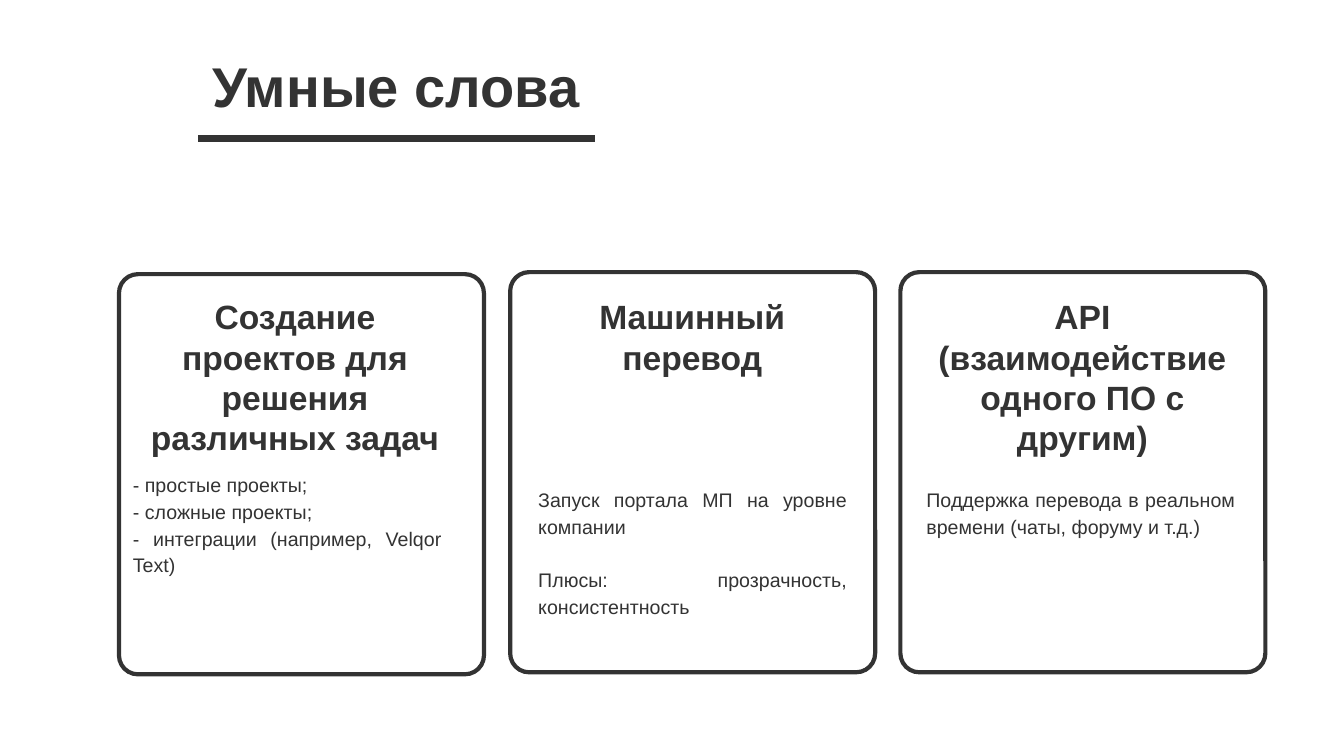
from lxml import etree
from pptx import Presentation
from pptx.dml.color import RGBColor
from pptx.enum.shapes import MSO_CONNECTOR, MSO_SHAPE
from pptx.enum.text import MSO_ANCHOR, MSO_AUTO_SIZE, PP_ALIGN
from pptx.oxml.ns import qn
from pptx.util import Inches, Pt

STRAIGHT = MSO_CONNECTOR.STRAIGHT
ROUNDED = MSO_SHAPE.ROUNDED_RECTANGLE
TOP = MSO_ANCHOR.TOP
FIT_SHAPE = MSO_AUTO_SIZE.SHAPE_TO_FIT_TEXT
CENTER, JUSTIFY = PP_ALIGN.CENTER, PP_ALIGN.JUSTIFY
DARK = "333333"
CARD_WIDTH, CARD_HEIGHT = 3.62, 3.97


def color(hex_value):
    return RGBColor.from_string(hex_value)


def write(holder, paragraphs, size, bold=False, align=CENTER, wrap=True,
          line_spacing=None, gap=0):
    """Fill a shape with paragraphs; gap is the space between them in points."""
    frame = holder.text_frame
    frame.word_wrap = wrap
    frame.auto_size = FIT_SHAPE
    frame.vertical_anchor = TOP
    for index, text in enumerate(paragraphs):
        paragraph = frame.add_paragraph() if index else frame.paragraphs[0]
        paragraph.alignment = align
        paragraph.line_spacing = line_spacing
        paragraph.space_before = Pt(gap if index else 0)
        run = paragraph.add_run()
        run.text = text
        run.font.name = "Arial"
        run.font.size = Pt(size)
        run.font.bold = bold
        run.font.color.rgb = color(DARK)


prs = Presentation()
prs.slide_width, prs.slide_height = Inches(13.33), Inches(7.5)
slide = prs.slides.add_slide(prs.slide_layouts[5])
shapes = slide.shapes

title = shapes.title
title.left, title.top = Inches(1.99), Inches(0.46)
title.width, title.height = Inches(3.88), Inches(0.77)
write(title, ["Умные слова"], 40, bold=True, wrap=False)

underline = shapes.add_connector(
    STRAIGHT, Inches(5.9), Inches(1.37), Inches(1.96), Inches(1.37))
underline.line.color.rgb = color(DARK)
underline.line.width = Pt(5)
etree.SubElement(underline._element.spPr, qn("a:effectLst"))

# Card left and top, heading left and height, body left, top and height
cards = [
    (1.18, 2.72, 1.25, 1.72, 1.22, 4.61, 1.17, 0,
     "Создание проектов для решения различных задач",
     ["- простые проекты;", "- сложные проекты;",
      "- интеграции (например, Velqor Text)"]),
    (5.06, 2.7, 5.19, 0.91, 5.24, 4.76, 1.44, 19,
     "Машинный перевод",
     ["Запуск портала МП на уровне компании",
      "Плюсы: прозрачность, консистентность"]),
    (8.93, 2.7, 9.06, 1.72, 9.09, 4.76, 0.64, 0,
     "API (взаимодействие одного ПО с другим)",
     ["Поддержка перевода в реальном времени (чаты, форуму и т.д.)"]),
]
for (left, top, heading_left, heading_height, body_left, body_top, body_height,
     gap, heading_text, body_paragraphs) in cards:
    card = shapes.add_shape(ROUNDED, Inches(left), Inches(top),
                            Inches(CARD_WIDTH), Inches(CARD_HEIGHT))
    card.adjustments[0] = 0.052
    card.shadow.inherit = False
    card.fill.background()
    card.line.color.rgb = color(DARK)
    card.line.width = Pt(3)

    heading = shapes.add_textbox(Inches(heading_left), Inches(2.89),
                                 Inches(3.35), Inches(heading_height))
    write(heading, [heading_text], 24, bold=True)

    body = shapes.add_textbox(Inches(body_left), Inches(body_top),
                              Inches(3.26), Inches(body_height))
    write(body, body_paragraphs, 14, align=JUSTIFY, line_spacing=1.14, gap=gap)

prs.save("out.pptx")
